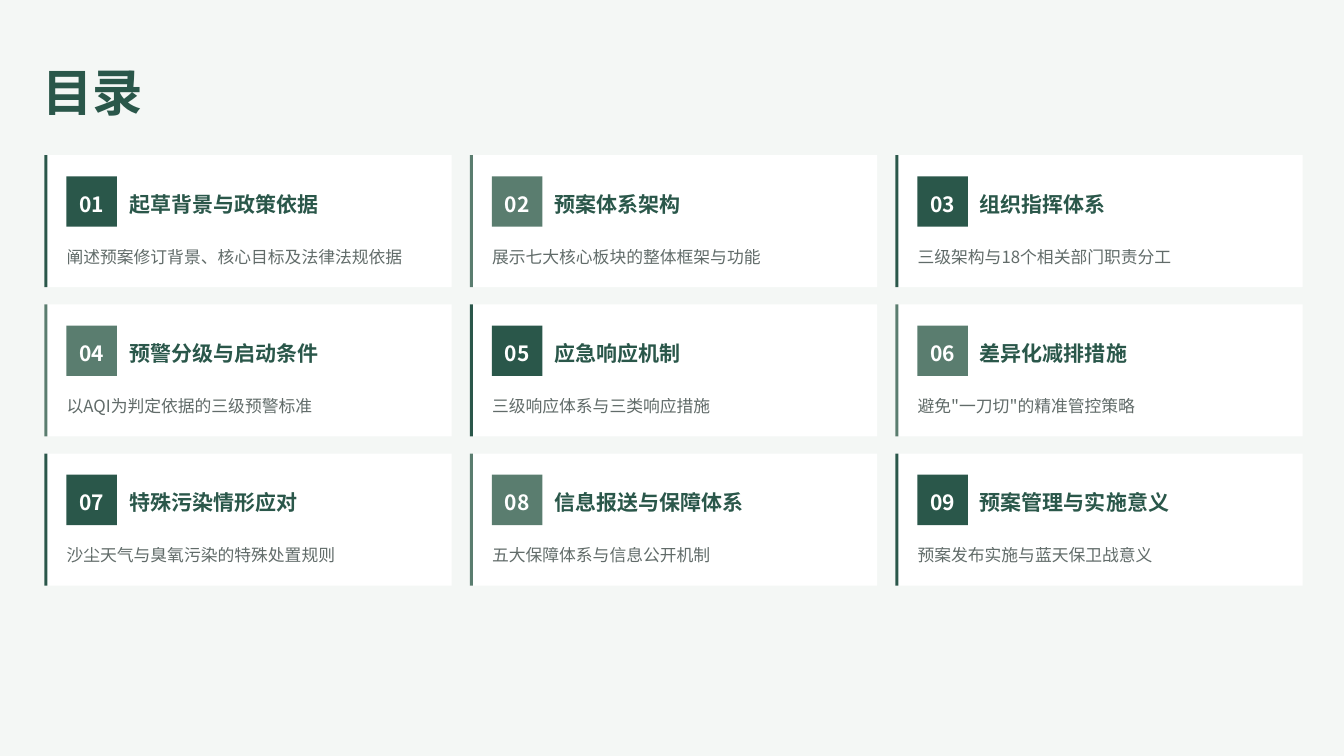
from lxml import etree
from pptx import Presentation
from pptx import util as u
from pptx.dml.color import RGBColor
from pptx.enum import shapes, text
from pptx.oxml.ns import qn

DARK, SAGE, INK = "2A574A", "5A7D6F", "1E2D2A"
WHITE, BACKGROUND = "FFFFFF", "F4F7F5"
FONT = "Noto Sans CJK SC"

CHAPTERS = [
    ("起草背景与政策依据", "阐述预案修订背景、核心目标及法律法规依据"),
    ("预案体系架构", "展示七大核心板块的整体框架与功能"),
    ("组织指挥体系", "三级架构与18个相关部门职责分工"),
    ("预警分级与启动条件", "以AQI为判定依据的三级预警标准"),
    ("应急响应机制", "三级响应体系与三类响应措施"),
    ("差异化减排措施", "避免\"一刀切\"的精准管控策略"),
    ("特殊污染情形应对", "沙尘天气与臭氧污染的特殊处置规则"),
    ("信息报送与保障体系", "五大保障体系与信息公开机制"),
    ("预案管理与实施意义", "预案发布实施与蓝天保卫战意义"),
]
COLUMNS = 3
CARD_LEFT, CARD_TOP = 0.44, 1.54
CARD_WIDTH, CARD_HEIGHT = 4.04, 1.31
COLUMN_STEP, ROW_STEP = 4.22, 1.48


def rgb(value):
    return RGBColor.from_string(value)


class ContentsSlide:
    def __init__(self, presentation):
        self.slide = presentation.slides.add_slide(presentation.slide_layouts[5])
        fill = self.slide.background.fill
        fill.solid()
        fill.fore_color.rgb = rgb(BACKGROUND)

    def set_text(self, shape, content, size, color, bold=True, spacing=1.2,
                 align=text.PP_ALIGN.LEFT, opacity=None):
        frame = shape.text_frame
        frame.word_wrap = True
        frame.auto_size = text.MSO_AUTO_SIZE.NONE
        frame.vertical_anchor = text.MSO_ANCHOR.MIDDLE
        frame.margin_left = frame.margin_right = 0
        frame.margin_top = frame.margin_bottom = 0
        paragraph = frame.paragraphs[0]
        paragraph.text = content
        paragraph.alignment = align
        paragraph.line_spacing = spacing
        font = paragraph.font
        font.name, font.size, font.bold = FONT, u.Pt(size), bold
        font.color.rgb = rgb(color)
        properties = paragraph._p.pPr.find(qn("a:defRPr"))
        etree.SubElement(properties, qn("a:ea"), typeface=FONT)
        if opacity is not None:
            tint = properties.find(".//" + qn("a:srgbClr"))
            etree.SubElement(tint, qn("a:alpha"), val=str(opacity * 1000))

    def title(self, content, left, top, width, height):
        shape = self.slide.shapes.title
        shape.left, shape.top = u.Inches(left), u.Inches(top)
        shape.width, shape.height = u.Inches(width), u.Inches(height)
        self.set_text(shape, content, 36, DARK, spacing=0.8)

    def rectangle(self, left, top, width, height, color):
        shape = self.slide.shapes.add_shape(
            shapes.MSO_SHAPE.RECTANGLE, u.Inches(left), u.Inches(top),
            u.Inches(width), u.Inches(height))
        shape.shadow.inherit = False
        shape.fill.solid()
        shape.fill.fore_color.rgb = rgb(color)
        shape.line.fill.background()
        return shape

    def label(self, content, left, top, width, height, size, color, **style):
        box = self.slide.shapes.add_textbox(
            u.Inches(left), u.Inches(top), u.Inches(width), u.Inches(height))
        self.set_text(box, content, size, color, **style)

    def card(self, number, heading, summary, left, top, accent):
        self.rectangle(left, top, CARD_WIDTH, CARD_HEIGHT, WHITE)
        self.rectangle(left, top, 0.03, CARD_HEIGHT, accent)
        badge = self.rectangle(left + 0.22, top + 0.21, 0.5, 0.5, accent)
        self.set_text(badge, f"{number:02d}", 15, WHITE,
                      align=text.PP_ALIGN.CENTER)
        self.label(heading, left + 0.84, top + 0.31, 3.07, 0.29, 15, DARK)
        self.label(summary, left + 0.22, top + 0.83, 3.69, 0.27, 12, INK,
                   bold=False, spacing=1.4, opacity=70)


def main():
    presentation = Presentation()
    presentation.slide_width = u.Inches(13.33)
    presentation.slide_height = u.Inches(7.5)
    contents = ContentsSlide(presentation)
    contents.title("目录", 0.42, 0.71, 12.75, 0.5)
    for index, (heading, summary) in enumerate(CHAPTERS):
        row, column = divmod(index, COLUMNS)
        contents.card(index + 1, heading, summary,
                      CARD_LEFT + column * COLUMN_STEP,
                      CARD_TOP + row * ROW_STEP,
                      SAGE if index % 2 else DARK)
    presentation.save("out.pptx")


if __name__ == "__main__":
    main()
